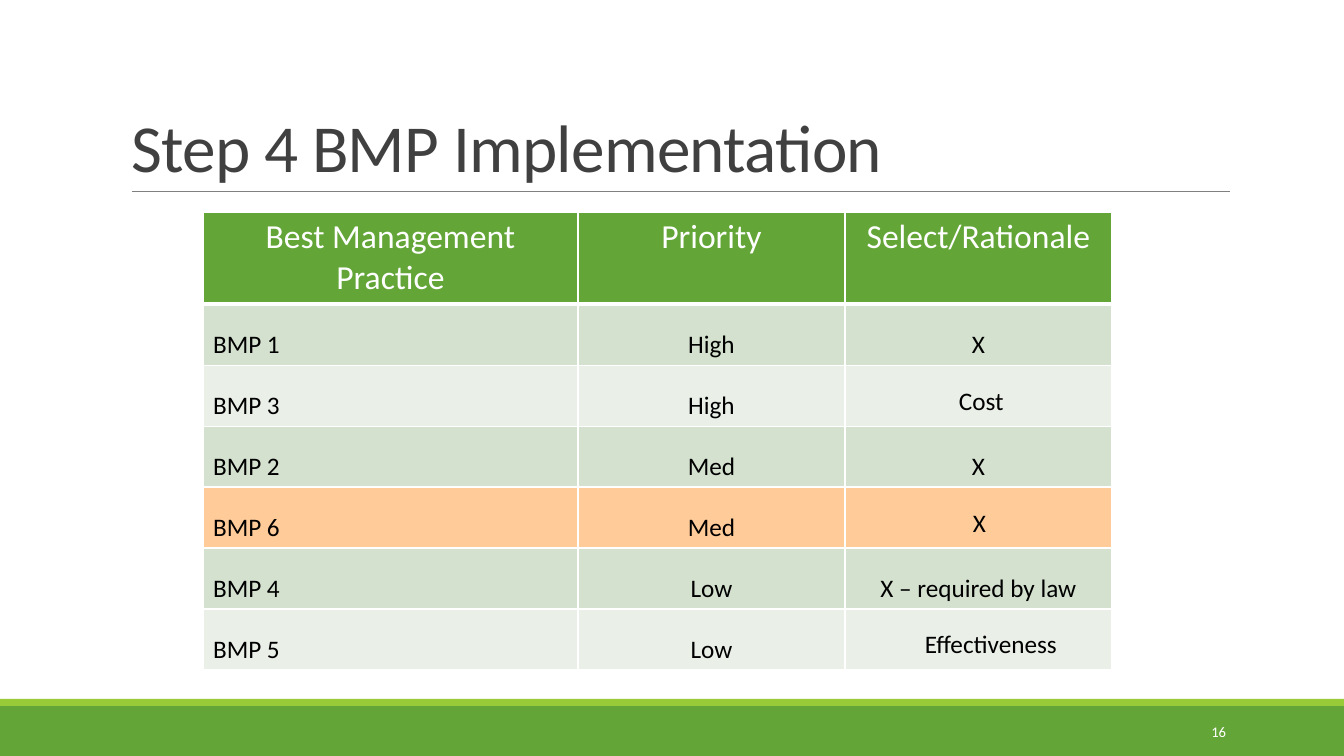
from pptx import Presentation
from pptx.dml.color import RGBColor
from pptx.enum.shapes import MSO_CONNECTOR, MSO_SHAPE
from pptx.enum.text import MSO_ANCHOR, PP_ALIGN
from pptx.oxml import parse_xml
from pptx.oxml.ns import nsdecls
from pptx.oxml.xmlchemy import OxmlElement
from pptx.util import Emu, Pt

WHITE = RGBColor(0xFF, 0xFF, 0xFF)
BLACK = RGBColor(0, 0, 0)
DARK = RGBColor(0x40, 0x40, 0x40)
GRAY = RGBColor(0x80, 0x80, 0x80)
GREEN = RGBColor(0x63, 0xA5, 0x37)
LIME = RGBColor(0x99, 0xCB, 0x38)
SAGE = RGBColor(0xD3, 0xE1, 0xCE)
PALE = RGBColor(0xEA, 0xF0, 0xE8)
PEACH = RGBColor(0xFF, 0xCC, 0x99)


def px(*sizes):
    return [Emu(round(n * 914400 / 100.8)) for n in sizes]


def style(frame, text, size, color, align=PP_ALIGN.LEFT):
    frame.text = text
    para = frame.paragraphs[0]
    para.alignment = align
    font = para.font
    font.name, font.size, font.bold = "Calibri", Pt(size), False
    font.color.rgb = color
    return para


deck = Presentation()
deck.slide_width, deck.slide_height = px(1344, 756)
slide = deck.slides.add_slide(deck.slide_layouts[5])
shapes = slide.shapes

# Footer bands
for top, height, color in [(706, 50, GREEN), (699, 7, LIME)]:
    band = shapes.add_shape(MSO_SHAPE.RECTANGLE, *px(0, top, 1344, height))
    band.shadow.inherit = False
    band.fill.solid()
    band.fill.fore_color.rgb = color
    band.line.fill.background()

# Title and its rule
title = shapes.title
title.left, title.top, title.width, title.height = px(121, 31, 1109, 160)
title.text_frame.vertical_anchor = MSO_ANCHOR.BOTTOM
para = style(title.text_frame, "Step 4 BMP Implementation", 48, DARK)
para.line_spacing = 0.85
para.runs[0].font._element.set("spc", "-50")

rule = shapes.add_connector(MSO_CONNECTOR.STRAIGHT, *px(132, 191, 1230, 191))
rule.line.color.rgb = GRAY
rule.line.width = Pt(0.5)
rule._element.spPr.append(OxmlElement("a:effectLst"))

# Table of practices
rows = [
    ("Best Management Practice", "Priority", "Select/Rationale", GREEN),
    ("BMP 1", "High", "X", SAGE),
    ("BMP 3", "High", "", PALE),
    ("BMP 2", "Med", "X", SAGE),
    ("BMP 6", "Med", "", PEACH),
    ("BMP 4", "Low", "X – required by law", SAGE),
    ("BMP 5", "Low", "", PALE),
]
table = shapes.add_table(len(rows), 3, *px(203, 212, 909, 458)).table
for col, width in zip(table.columns, px(375, 267, 267)):
    col.width = width

for r, (*texts, color) in enumerate(rows):
    head = r == 0
    table.rows[r].height = px(92 if head else 61)[0]
    for c, text in enumerate(texts):
        cell = table.cell(r, c)
        cell.fill.solid()
        cell.fill.fore_color.rgb = color
        cell.vertical_anchor = MSO_ANCHOR.TOP if head else MSO_ANCHOR.BOTTOM
        align = PP_ALIGN.CENTER if head or c else PP_ALIGN.LEFT
        style(cell.text_frame, text, 24 if head else 18,
              WHITE if head else BLACK, align)
        # White borders, heavier under the header
        for i, side in enumerate("LRTB"):
            width = Pt(3 if head and side == "B" else 1)
            edge = parse_xml(
                f'<a:ln{side} {nsdecls("a")} w="{width}"><a:solidFill>'
                f'<a:srgbClr val="{WHITE}"/></a:solidFill></a:ln{side}>')
            cell._tc.get_or_add_tcPr().insert(i, edge)

# Notes over the table and the page number
LEFT, RIGHT = PP_ALIGN.LEFT, PP_ALIGN.RIGHT
TOP, MID = MSO_ANCHOR.TOP, MSO_ANCHOR.MIDDLE
for text, spot, size, color, align, anchor in [
    ("Cost", (949, 380, 93, 42), 18, BLACK, LEFT, TOP),
    ("Effectiveness", (915, 623, 159, 40), 18, BLACK, LEFT, TOP),
    ("X", (963, 502, 66, 40), 18, BLACK, LEFT, TOP),
    ("16", (1092, 712, 144, 40), 10.5, WHITE, RIGHT, MID),
]:
    frame = shapes.add_textbox(*px(*spot)).text_frame
    frame.word_wrap = True
    frame.vertical_anchor = anchor
    style(frame, text, size, color, align)

deck.save("out.pptx")
